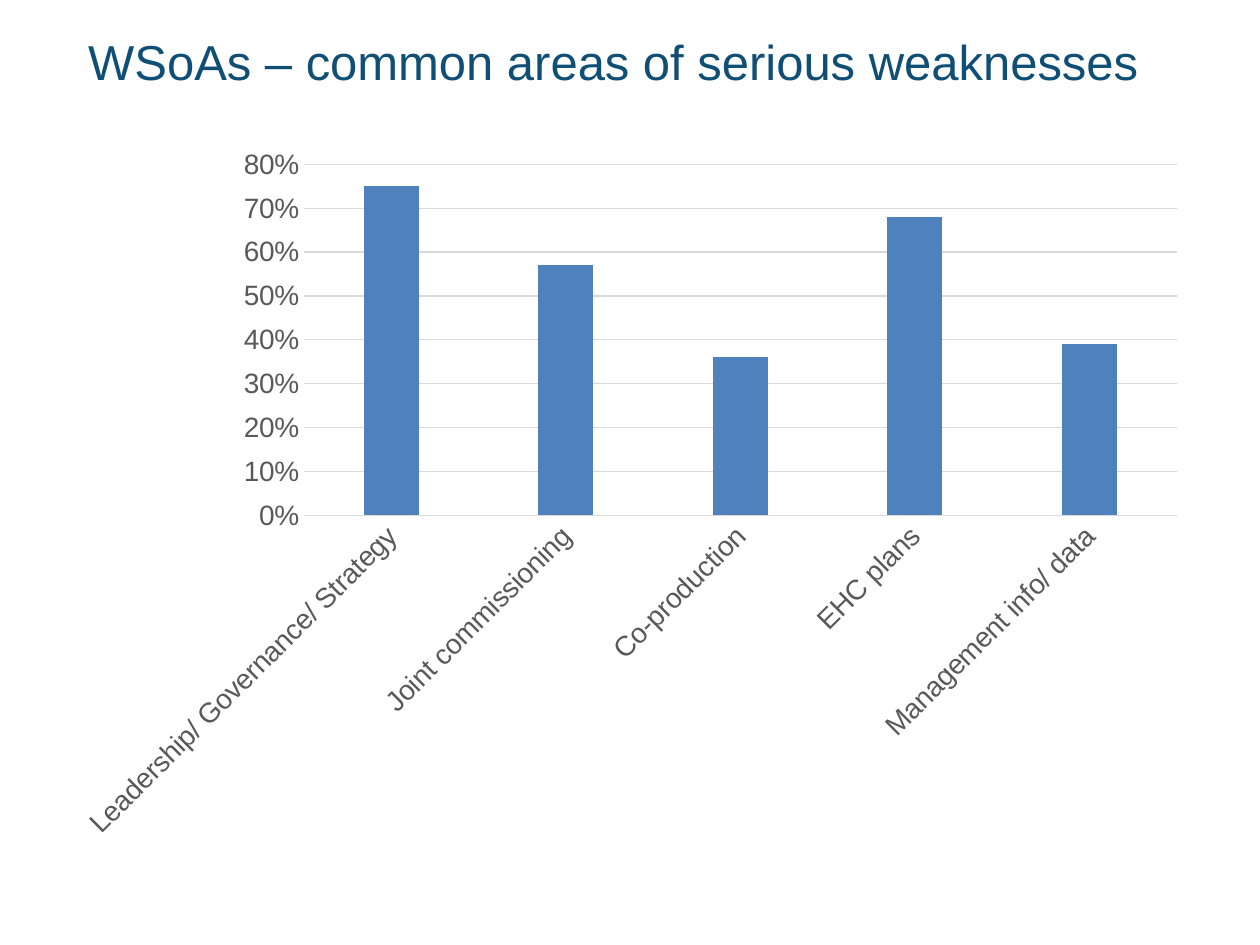
from dataclasses import dataclass

from pptx import Presentation
from pptx.chart.data import CategoryChartData as Data
from pptx.dml.color import RGBColor as Rgb
from pptx.enum.chart import XL_CHART_TYPE as Kind, XL_TICK_MARK as Tick
from pptx.enum.text import MSO_ANCHOR as Anchor, PP_ALIGN as Align
from pptx.util import Inches, Pt


@dataclass(frozen=True)
class Theme:
    face: str = "Arial"
    title: str = "104F75"
    label: str = "595959"
    grid: str = "D9D9D9"
    bar: str = "4F81BD"
    head: int = 28
    tick: int = 16
    base: int = 10
    rule: float = 0.75


def style(font, size, color, face):
    font.size, font.name, font.bold = Pt(size), face, False
    font.color.rgb = Rgb.from_string(color)


def write(frame, text, size, color, face, align=Align.LEFT, anchor=Anchor.MIDDLE):
    frame.word_wrap = True
    frame.vertical_anchor = anchor
    para = frame.paragraphs[0]
    para.alignment = align
    run = para.add_run()
    run.text = text
    style(run.font, size, color, face)


class Deck:
    """Hold the theme and the current slide, and add elements to it."""

    def __init__(self, theme):
        self.theme = theme
        self.file = Presentation()
        self.file.slide_width, self.file.slide_height = Inches(10), Inches(7.5)
        self.slide = self.file.slides.add_slide(self.file.slide_layouts[5])

    def title(self, text, left, top, width, height):
        box = self.slide.shapes.title
        box.left, box.top = Inches(left), Inches(top)
        box.width, box.height = Inches(width), Inches(height)
        look = self.theme
        write(box.text_frame, text, size=look.head, color=look.title, face=look.face)

    def line(self, line):
        line.color.rgb = Rgb.from_string(self.theme.grid)
        line.width = Pt(self.theme.rule)

    def axis(self, axis):
        look = self.theme
        axis.major_tick_mark = axis.minor_tick_mark = Tick.NONE
        style(axis.tick_labels.font, look.tick, look.label, look.face)

    def chart(self, name, rows, left, top, width, height):
        look = self.theme
        data = Data(number_format="0%")
        data.categories = list(rows)
        data.add_series(name, list(rows.values()))
        area = [Inches(n) for n in (left, top, width, height)]
        chart = self.slide.shapes.add_chart(Kind.COLUMN_CLUSTERED, *area, data).chart
        chart.has_legend = chart.has_title = False
        style(chart.font, look.base, "000000", look.face)

        plot = chart.plots[0]
        plot.gap_width, plot.overlap, plot.vary_by_categories = 219, -27, False
        fill = plot.series[0].format.fill
        fill.solid()
        fill.fore_color.rgb = Rgb.from_string(look.bar)

        cats, vals = chart.category_axis, chart.value_axis
        for axis in (cats, vals):
            self.axis(axis)
        self.line(cats.format.line)
        body = cats._element.xpath("c:txPr/a:bodyPr")[0]
        body.set("rot", str(-45 * 60000))
        body.set("vert", "horz")

        vals.minimum_scale, vals.maximum_scale, vals.major_unit = 0, 0.8, 0.1
        vals.tick_labels.number_format = "0%"
        vals.tick_labels.number_format_is_linked = False
        vals.format.line.fill.background()
        vals.has_major_gridlines = True
        self.line(vals.major_gridlines.format.line)


def main():
    deck = Deck(Theme())
    deck.title("WSoAs – common areas of serious weaknesses", 0.6, 0.13, 9.21, 0.71)
    rows = {
        "Leadership/ Governance/ Strategy": 0.75,
        "Joint commissioning": 0.57,
        "Co-production": 0.36,
        "EHC plans": 0.68,
        "Management info/ data": 0.39,
    }
    deck.chart("Series 1", rows, 0.48, 1.07, 9.04, 5.7)
    deck.file.save("out.pptx")


if __name__ == "__main__":
    main()
